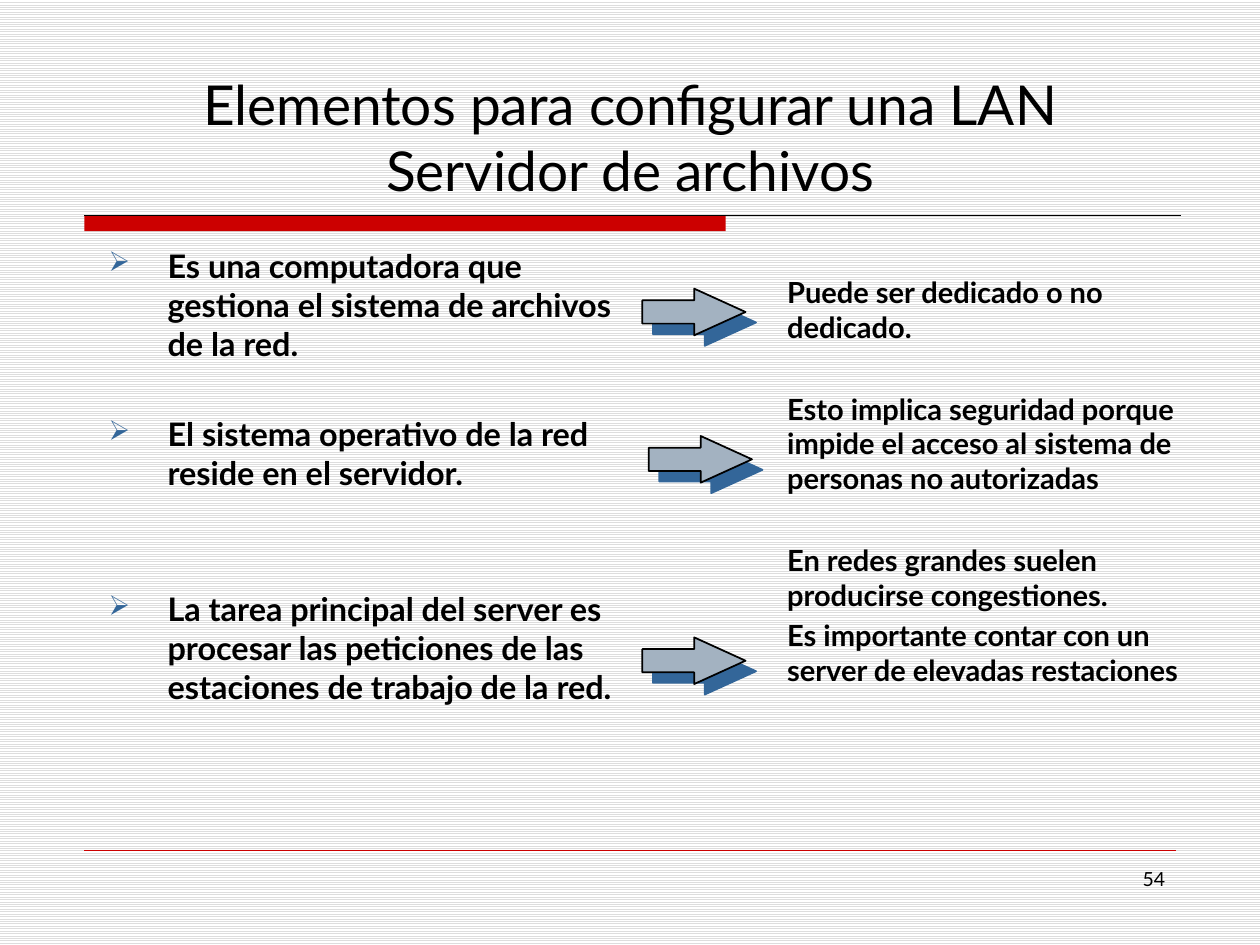
from dataclasses import dataclass
from lxml import etree
from pptx import Presentation
from pptx.dml.color import RGBColor
from pptx.enum.dml import MSO_PATTERN
from pptx.enum.shapes import MSO_CONNECTOR, MSO_SHAPE
from pptx.enum.text import MSO_ANCHOR, PP_ALIGN
from pptx.oxml.ns import qn
from pptx.util import Cm, Pt

LEFT, CENTER, RIGHT = PP_ALIGN.LEFT, PP_ALIGN.CENTER, PP_ALIGN.RIGHT
TOP, BOTTOM = MSO_ANCHOR.TOP, MSO_ANCHOR.BOTTOM
RECT, ARROW = MSO_SHAPE.RECTANGLE, MSO_SHAPE.RIGHT_ARROW
LINE, STRIPES = MSO_CONNECTOR.STRAIGHT, MSO_PATTERN.LIGHT_HORIZONTAL


@dataclass(frozen=True)
class Theme:
    font: str = "Lato"
    ink: str = "000000"
    red: str = "CC0000"
    blue: str = "336699"
    steel: str = "A3B2C1"
    paper: str = "FFFFFF"
    stripe: str = "DDDDDD"
    title: float = 31.4
    point: float = 18.5
    note: float = 16.6
    page: float = 11.1


THEME = Theme()
INDENT = Cm(1.19)
POINTS = [
    ("Es una computadora que gestiona el sistema de archivos de la red.", 0),
    ("El sistema operativo de la red reside en el servidor.", 29.6),
    ("La tarea principal del server es procesar las peticiones de las "
     "estaciones de trabajo de la red.", 55.5),
]
NOTES = [
    ("Puede ser dedicado o no dedicado.", 0),
    ("Esto implica seguridad porque impide el acceso al sistema de "
     "personas no autorizadas", 26.6),
    ("En redes grandes suelen producirse congestiones.", 26.6),
    ("Es importante contar con un server de elevadas restaciones", 3.3),
]
ARROWS = [(12.95, 5.82), (13.08, 8.79), (12.95, 12.85)]


def tint(code):
    return RGBColor.from_string(code)


def apply(thing, values):
    for name, value in values.items():
        setattr(thing, name, value)


def node(parent, tag, **values):
    return etree.SubElement(parent, qn(tag), {k: str(v) for k, v in values.items()})


def paint(slide):
    fill = slide.background.fill
    fill.patterned()
    fill.pattern = STRIPES
    fill.fore_color.rgb = tint(THEME.stripe)
    fill.back_color.rgb = tint(THEME.paper)


def add_text(slide, box, items, size, bold=False, align=LEFT, anchor=TOP, indent=0, mark=None):
    frame = slide.shapes.add_textbox(*map(Cm, box)).text_frame
    apply(frame, {
        "word_wrap": True, "vertical_anchor": anchor,
        "margin_left": Cm(0.23), "margin_right": Cm(0.23),
        "margin_top": Cm(0.13), "margin_bottom": Cm(0.13),
    })
    for i, (text, gap) in enumerate(items):
        para = frame.add_paragraph() if i else frame.paragraphs[0]
        apply(para, {"text": text, "alignment": align, "space_before": Pt(gap)})
        for run in para.runs:
            apply(run.font, {"name": THEME.font, "size": Pt(size), "bold": bold})
            run.font.color.rgb = tint(THEME.ink)
        props = para._p.get_or_add_pPr()
        props.set("marL", str(indent))
        if mark:
            props.set("indent", str(-indent))
            node(node(props, "a:buClr"), "a:srgbClr", val=THEME.blue)
            node(props, "a:buSzPct", val=85000)
            node(props, "a:buChar", char=mark)


def add_rule(slide, start, end, y, color, width):
    rule = slide.shapes.add_connector(LINE, Cm(start), Cm(y), Cm(end), Cm(y))
    rule.line.color.rgb = tint(color)
    rule.line.width = Pt(width)
    node(rule._element.spPr, "a:effectLst")


def add_shape(slide, kind, box, color):
    shape = slide.shapes.add_shape(kind, *map(Cm, box))
    shape.shadow.inherit = False
    shape.fill.solid()
    shape.fill.fore_color.rgb = tint(color)
    shape.line.fill.background()
    return shape


def add_arrow(slide, x, y):
    arrow = add_shape(slide, ARROW, (x, y, 2.08, 0.94), THEME.steel)
    arrow.adjustments[0] = 0.5
    arrow.adjustments[1] = 1.1
    arrow.line.color.rgb = tint(THEME.ink)
    arrow.line.width = Pt(1)
    effects = arrow._element.spPr.find(qn("a:effectLst"))
    shade = node(effects, "a:outerShdw", dist=Pt(8.5), dir=2700000, algn="ctr", rotWithShape=0)
    node(shade, "a:srgbClr", val=THEME.blue)


def main():
    deck = Presentation()
    apply(deck, {"slide_width": Cm(25.4), "slide_height": Cm(19.05)})
    slide = deck.slides.add_slide(deck.slide_layouts[6])
    paint(slide)
    add_shape(slide, RECT, (1.7, 4.34, 12.93, 0.32), THEME.red)
    add_rule(slide, 1.7, 23.8, 4.34, THEME.ink, 0.75)
    add_rule(slide, 1.7, 23.7, 17.15, THEME.red, 0.25)
    add_text(slide, (18.21, 17.35, 5.51, 1.32), [("54", 0)], THEME.page, align=RIGHT)
    add_text(slide, (1.6, 0.84, 22.22, 3.38),
             [("Elementos para configurar una LAN\vServidor de archivos", 0)],
             THEME.title, align=CENTER, anchor=BOTTOM)
    add_text(slide, (1.96, 4.83, 10.95, 10.74), POINTS, THEME.point,
             bold=True, indent=INDENT, mark="➢")
    add_text(slide, (14.45, 5.41, 10.54, 8.79), NOTES, THEME.note, bold=True, indent=INDENT)
    for x, y in ARROWS:
        add_arrow(slide, x, y)
    deck.save("out.pptx")


if __name__ == "__main__":
    main()
